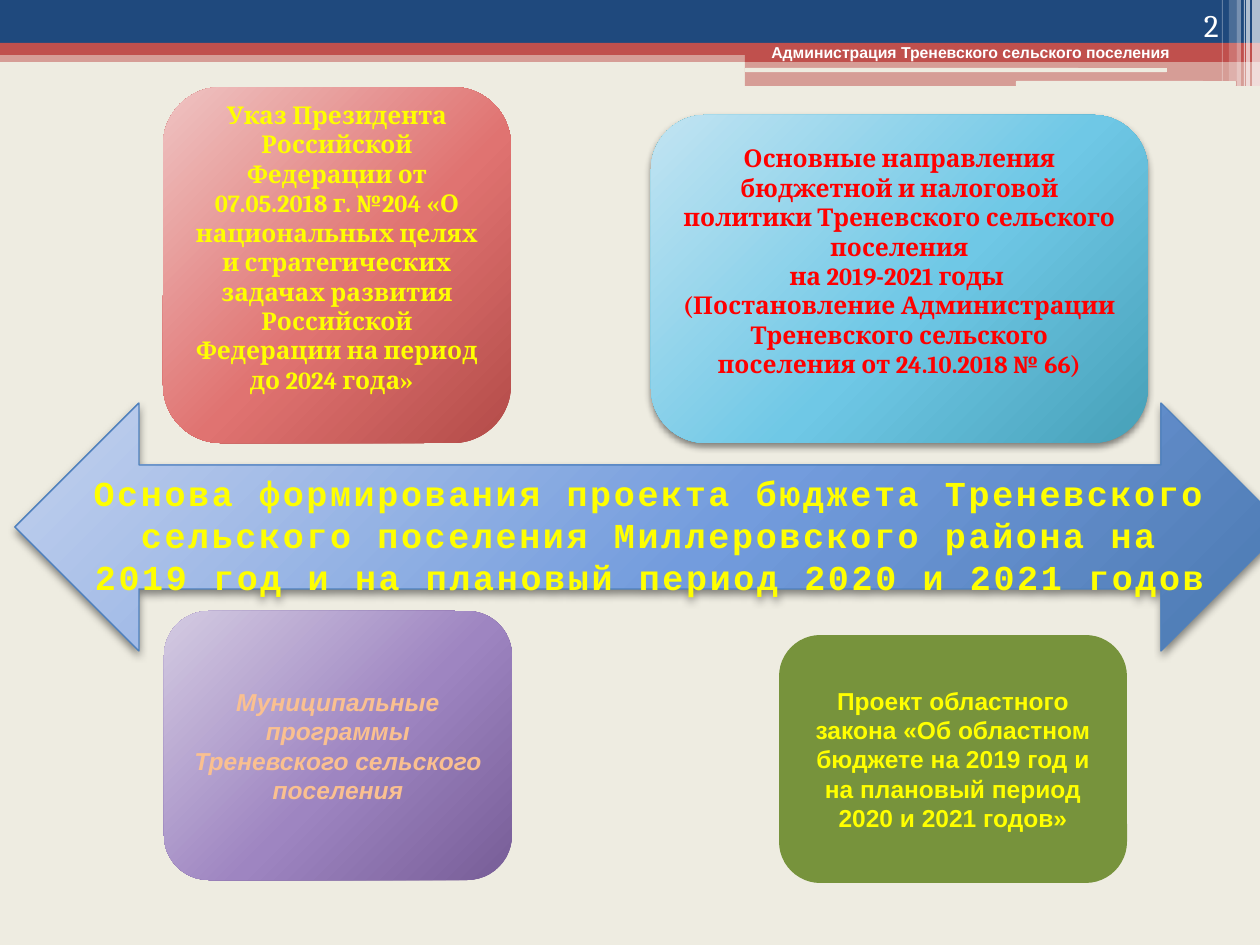
from lxml import etree
from pptx import Presentation
from pptx.dml.color import RGBColor
from pptx.enum.shapes import MSO_SHAPE
from pptx.enum.text import MSO_ANCHOR, PP_ALIGN
from pptx.oxml.ns import qn
from pptx.util import Emu, Pt

RECT, ROUND = MSO_SHAPE.RECTANGLE, MSO_SHAPE.ROUNDED_RECTANGLE
ARROW = MSO_SHAPE.LEFT_RIGHT_ARROW
TOP, MIDDLE, BOTTOM = MSO_ANCHOR.TOP, MSO_ANCHOR.MIDDLE, MSO_ANCHOR.BOTTOM
LEFT, CENTER, RIGHT = PP_ALIGN.LEFT, PP_ALIGN.CENTER, PP_ALIGN.RIGHT

WIDTH, HEIGHT = 1260, 945
PAPER, NAVY, RED, WHITE, YELLOW = "EEECE1", "1F497D", "C0504D", "FFFFFF", "FFFF00"

BANDS = [
    (RECT, (0, 50, WIDTH, 12), RED, 50),
    (RECT, (0, 0, WIDTH, 43), NAVY, 100),
    (RECT, (0, 43, WIDTH, 12), RED, 100),
    (RECT, (745, 49, 515, 13), RED, 100),
    (RECT, (745, 61, 515, 25), RED, 50),
    (ROUND, (745, 68, 422, 4), PAPER, 100),
    (ROUND, (1016, 81, 220, 5), PAPER, 100),
]
STRIPES = [(1252, 8, 86, 65), (1246, 4, 86, 65), (1244, 1, 86, 60),
           (1237, 4, 86, 40), (1229, 8, 81, 20), (1222, 1, 81, 30)]

HEADER = "Администрация Треневского сельского поселения"
PAGE_NUMBER = "2"

BASES = [
    dict(box=(163, 87, 348, 356), fill=("EFC4C3", "E07371", "B34B48"), raise_by=36,
         lines=["Указ Президента Российской Федерации от 07.05.2018 г. №204 «О национальных "
                "целях и стратегических задачах развития Российской Федерации на период "
                "до 2024 года»  "],
         font=dict(face="Cambria", color=YELLOW)),
    dict(box=(651, 115, 497, 328), fill=("C2E4F2", "6FC8E6", "46A0B8"), raise_by=36,
         shadow=True,
         lines=["Основные направления бюджетной и налоговой политики Треневского сельского "
                "поселения",
                "на 2019-2021 годы ",
                "(Постановление Администрации Треневского сельского поселения "
                "от 24.10.2018 № 66)"],
         font=dict(face="Cambria", color="FF0000")),
    dict(box=(164, 611, 348, 269), fill=("D4CBE2", "9E85C1", "775D97"),
         lines=["Муниципальные программы Треневского сельского поселения"],
         font=dict(face="Arial", color="FAC090", italic=True)),
    dict(box=(779, 635, 348, 248), fill="77933C",
         lines=["Проект областного закона «Об областном бюджете на 2019 год и на плановый "
                "период 2020 и 2021 годов»"],
         font=dict(face="Arial", color=YELLOW)),
    dict(kind=ARROW, box=(15, 403, 1270, 248), fill=("C4D2EE", "739CDD", "4A78B0"),
         outline="4F81BD", shadow=True, anchor=TOP,
         lines=["Основа формирования проекта бюджета Треневского сельского поселения "
                "Миллеровского района на 2019 год и на плановый период 2020 и 2021 годов"],
         font=dict(face="Courier New", color=YELLOW, size=20, spacing=150)),
]


def px(length):
    return Emu(round(length * 914400 / 126))


def rgb(color):
    return RGBColor.from_string(color)


def child(parent, tag, **attributes):
    return etree.SubElement(parent, qn("a:" + tag),
                            {key: str(value) for key, value in attributes.items()})


def paint_gradient(shape, colors):
    shape.fill.background()
    properties = shape._element.spPr
    gradient = etree.Element(qn("a:gradFill"), {"rotWithShape": "1"})
    stops = child(gradient, "gsLst")
    for position, color in zip((0, 55, 100), colors):
        child(child(stops, "gs", pos=position * 1000), "srgbClr", val=color)
    path = child(gradient, "path")
    path.set("path", "circle")
    child(path, "fillToRect", l=-40000, t=-90000, r=140000, b=190000)
    properties.replace(properties.find(qn("a:noFill")), gradient)


def cast_shadow(shape):
    effects = shape._element.spPr.find(qn("a:effectLst"))
    shadow = child(effects, "outerShdw", blurRad=Pt(4), dist=Pt(2), dir=5400000,
                   rotWithShape=0)
    child(child(shadow, "srgbClr", val="000000"), "alpha", val=45000)


def add_figure(slide, kind, box, fill, opacity=100, outline=None, shadow=False):
    shape = slide.shapes.add_shape(kind, *map(px, box))
    if outline:
        shape.line.color.rgb = rgb(outline)
        shape.line.width = Pt(0.75)
    else:
        shape.line.fill.background()
    shape.shadow.inherit = False
    if isinstance(fill, tuple):
        paint_gradient(shape, fill)
    else:
        shape.fill.solid()
        shape.fill.fore_color.rgb = rgb(fill)
        if opacity < 100:
            color = shape._element.spPr.find(qn("a:solidFill"))[0]
            child(color, "alpha", val=opacity * 1000)
    if shadow:
        cast_shadow(shape)
    return shape


def write(shape, lines, face, color, size=14, bold=True, italic=False, spacing=0,
          align=CENTER, anchor=MIDDLE):
    frame = shape.text_frame
    frame.word_wrap = True
    frame.vertical_anchor = anchor
    for index, line in enumerate(lines):
        paragraph = frame.add_paragraph() if index else frame.paragraphs[0]
        paragraph.alignment = align
        run = paragraph.add_run()
        run.text = line
        run.font.name = face
        run.font.size = Pt(size)
        run.font.bold = bold
        run.font.italic = italic
        run.font.color.rgb = rgb(color)
        if spacing:
            run._r.get_or_add_rPr().set("spc", str(spacing))


def main():
    deck = Presentation()
    deck.slide_width, deck.slide_height = px(WIDTH), px(HEIGHT)
    slide = deck.slides.add_slide(deck.slide_layouts[6])
    slide.background.fill.solid()
    slide.background.fill.fore_color.rgb = rgb(PAPER)

    for kind, box, color, opacity in BANDS:
        add_figure(slide, kind, box, color, opacity)
    for left, width, height, opacity in STRIPES:
        add_figure(slide, RECT, (left, 0, width, height), WHITE, opacity)

    header = slide.shapes.add_textbox(*map(px, (759, 37, 466, 31)))
    write(header, [HEADER], "Arial", WHITE, size=9, align=LEFT, anchor=TOP)

    for base in BASES:
        figure = add_figure(slide, base.get("kind", ROUND), base["box"], base["fill"],
                            outline=base.get("outline"), shadow=base.get("shadow", False))
        write(figure, base["lines"], anchor=base.get("anchor", MIDDLE), **base["font"])
        figure.text_frame.margin_bottom = px(6 + base.get("raise_by", 0))

    number = slide.shapes.add_textbox(*map(px, (1126, 0, 105, 50)))
    write(number, [PAGE_NUMBER], "Cambria", WHITE, size=18, bold=False, align=RIGHT,
          anchor=BOTTOM)

    deck.save("out.pptx")


if __name__ == "__main__":
    main()
